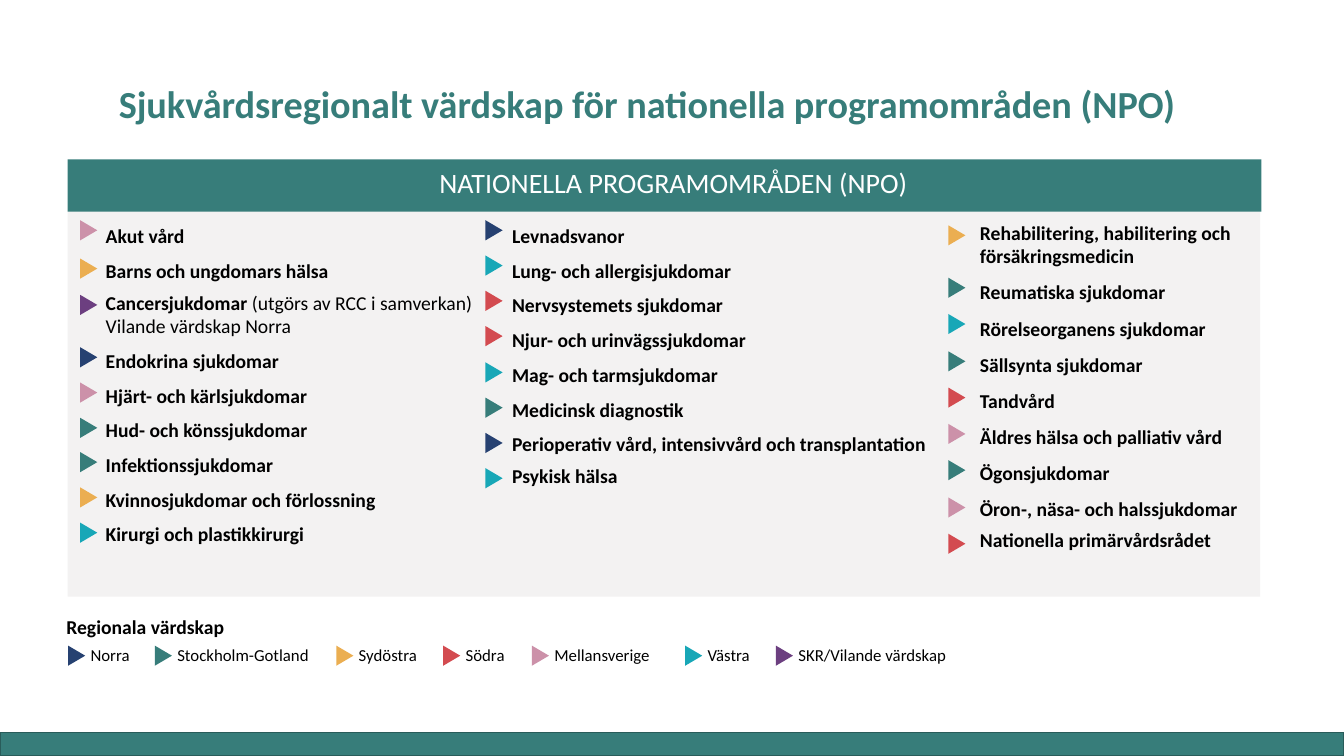
from dataclasses import dataclass
from typing import Optional

import lxml.etree
import pptx
import pptx.dml.color
import pptx.enum.shapes
import pptx.enum.text
import pptx.oxml.ns
import pptx.util

EMU_PER_PX = 9144  # 100 px to the inch
FONT = "Calibri"
COLORS = {
    "teal": "377D7A", "teal_edge": "295C5A", "panel": "D0CECE",
    "white": "FFFFFF", "black": "000000",
}
REGION_COLORS = {
    "Norra": "264171", "Stockholm-Gotland": "377D7A", "Sydöstra": "EBAE51",
    "Södra": "D34B50", "Mellansverige": "CC91A9", "Västra": "18A7B7",
    "SKR/Vilande värdskap": "6C3F80",
}
Box = tuple[int, int, int, int]
ALIGN = pptx.enum.text.PP_ALIGN
ANCHOR = pptx.enum.text.MSO_ANCHOR
SHAPES = pptx.enum.shapes.MSO_SHAPE


@dataclass(frozen=True)
class Line:
    text: str
    region: str = ""
    tail: str = ""  # regular-weight ending
    bold: bool = True
    single: bool = False  # single line spacing
    after: int = 0


@dataclass(frozen=True)
class Column:
    box: Box
    marker_left: int
    lead_tops: tuple[int, ...]  # markers above the evenly spaced ones
    first_top: int
    last_top: int
    pitch: float
    lines: tuple[Line, ...]
    last_box: Optional[Box] = None  # own box for the last line


@dataclass(frozen=True)
class LegendEntry:
    region: str
    left: int
    width: int


COLUMNS = (
    Column((95, 206, 392, 381), 78, (220, 258, 294), 346, 520, 24.8, (
        Line("Akut vård", "Mellansverige"),
        Line("Barns och ungdomars hälsa", "Sydöstra", after=6),
        Line("Cancersjukdomar ", "SKR/Vilande värdskap",
             tail="(utgörs av RCC i samverkan)", single=True),
        Line("Vilande värdskap Norra", bold=False, single=True),
        Line("Endokrina sjukdomar", "Norra"),
        Line("Hjärt- och kärlsjukdomar", "Mellansverige"),
        Line("Hud- och könssjukdomar", "Stockholm-Gotland"),
        Line("Infektionssjukdomar", "Stockholm-Gotland"),
        Line("Kvinnosjukdomar och förlossning", "Sydöstra"),
        Line("Kirurgi och plastikkirurgi", "Västra"),
    )),
    Column((498, 206, 435, 288), 480, (), 220, 466, 24.8, (
        Line("Levnadsvanor", "Norra"),
        Line("Lung- och allergisjukdomar", "Västra"),
        Line("Nervsystemets sjukdomar", "Södra"),
        Line("Njur- och urinvägssjukdomar", "Södra"),
        Line("Mag- och tarmsjukdomar", "Västra"),
        Line("Medicinsk diagnostik", "Stockholm-Gotland"),
        Line("Perioperativ vård, intensivvård och transplantation", "Norra", after=6),
        Line("Psykisk hälsa", "Västra", single=True),
    )),
    Column((962, 214, 292, 344), 939, (225,), 277, 531, 25.8, (
        Line("Rehabilitering, habilitering och försäkringsmedicin", "Sydöstra",
             single=True),
        Line("Reumatiska sjukdomar", "Stockholm-Gotland"),
        Line("Rörelseorganens sjukdomar", "Västra"),
        Line("Sällsynta sjukdomar", "Stockholm-Gotland"),
        Line("Tandvård", "Södra"),
        Line("Äldres hälsa och palliativ vård", "Mellansverige"),
        Line("Ögonsjukdomar", "Stockholm-Gotland"),
        Line("Öron-, näsa- och halssjukdomar", "Mellansverige"),
        Line("Nationella primärvårdsrådet", "Södra", single=True),
    ), last_box=(962, 519, 273, 34)),
)
LEGEND = (
    LegendEntry("Norra", 66, 60), LegendEntry("Stockholm-Gotland", 152, 152),
    LegendEntry("Sydöstra", 332, 80), LegendEntry("Södra", 438, 60),
    LegendEntry("Mellansverige", 526, 116), LegendEntry("Västra", 678, 64),
    LegendEntry("SKR/Vilande värdskap", 768, 168),
)


def px(length: float) -> pptx.util.Emu:
    return pptx.util.Emu(round(length * EMU_PER_PX))


def rgb(color: str) -> pptx.dml.color.RGBColor:
    return pptx.dml.color.RGBColor.from_string(color)


def add_text(slide, box: Box, *lines: Line, size: float = 14,
             color: str = COLORS["black"], pitch: Optional[float] = None,
             align=ALIGN.LEFT, anchor=ANCHOR.TOP, wrap: bool = True) -> None:
    """Write one paragraph per line; pitch is points, or a factor below 2."""
    frame = slide.shapes.add_textbox(*map(px, box)).text_frame
    frame.word_wrap = wrap
    frame.vertical_anchor = anchor
    for index, line in enumerate(lines):
        paragraph = frame.add_paragraph() if index else frame.paragraphs[0]
        paragraph.alignment = align
        if pitch and not line.single:
            paragraph.line_spacing = pitch if pitch < 2 else pptx.util.Pt(pitch)
        if line.after:
            paragraph.space_after = pptx.util.Pt(line.after)
        for text, bold in ((line.text, line.bold), (line.tail, False)):
            if text:
                run = paragraph.add_run()
                run.text = text
                run.font.name = FONT
                run.font.size = pptx.util.Pt(size)
                run.font.bold = bold
                run.font.color.rgb = rgb(color)


def add_filled(slide, kind, box: Box, color: str, edge: str = "",
               opacity: int = 100):
    shape = slide.shapes.add_shape(kind, *map(px, box))
    shape.shadow.inherit = False
    shape.fill.solid()
    shape.fill.fore_color.rgb = rgb(color)
    if opacity < 100:
        fill = shape.fill._xPr.find(".//" + pptx.oxml.ns.qn("a:srgbClr"))
        alpha = lxml.etree.SubElement(fill, pptx.oxml.ns.qn("a:alpha"))
        alpha.set("val", str(opacity * 1000))
    if edge:
        shape.line.color.rgb = rgb(edge)
        shape.line.width = pptx.util.Pt(1)
    else:
        shape.line.fill.background()
    return shape


def add_marker(slide, left: int, top: int, region: str) -> None:
    marker = add_filled(slide, SHAPES.ISOSCELES_TRIANGLE, (left, top, 20, 17),
                        REGION_COLORS[region])
    marker.rotation = 90


def add_column(slide, column: Column) -> None:
    lines = column.lines
    if column.last_box:
        add_text(slide, column.last_box, lines[-1])
        lines = lines[:-1]
    add_text(slide, column.box, *lines, pitch=column.pitch)
    regions = [line.region for line in column.lines if line.region]
    steps = len(regions) - len(column.lead_tops) - 1
    gap = (column.last_top - column.first_top) / steps
    even_tops = [round(column.first_top + gap * step) for step in range(steps + 1)]
    for top, region in zip([*column.lead_tops, *even_tops], regions):
        add_marker(slide, column.marker_left, top, region)


def add_legend(slide) -> None:
    add_text(slide, (56, 605, 1257, 34), Line("Regionala värdskap"))
    for entry in LEGEND:
        add_text(slide, (entry.left + 14, 635, entry.width, 30),
                 Line(entry.region, bold=False), size=12, wrap=False)
        add_marker(slide, entry.left, 642, entry.region)


def main() -> None:
    presentation = pptx.Presentation()
    presentation.slide_width, presentation.slide_height = px(1333), px(750)
    slide = presentation.slides.add_slide(presentation.slide_layouts[6])
    add_filled(slide, SHAPES.RECTANGLE, (0, 727, 1333, 23), COLORS["teal"],
               edge=COLORS["teal_edge"])
    add_filled(slide, SHAPES.RECTANGLE, (67, 209, 1183, 383), COLORS["panel"],
               opacity=25)
    add_filled(slide, SHAPES.RECTANGLE, (67, 158, 1184, 52), COLORS["teal"])
    add_text(slide, (68, 159, 1200, 77),
             Line("NATIONELLA PROGRAMOMRÅDEN (NPO)", bold=False),
             size=20, color=COLORS["white"], align=ALIGN.CENTER)
    for column in COLUMNS:
        add_column(slide, column)
    add_legend(slide)
    add_text(slide, (108, 64, 1143, 67),
             Line("Sjukvårdsregionalt värdskap för nationella programområden (NPO)"),
             size=27.3, color=COLORS["teal"], pitch=0.9, anchor=ANCHOR.BOTTOM)
    presentation.save("out.pptx")


if __name__ == "__main__":
    main()
